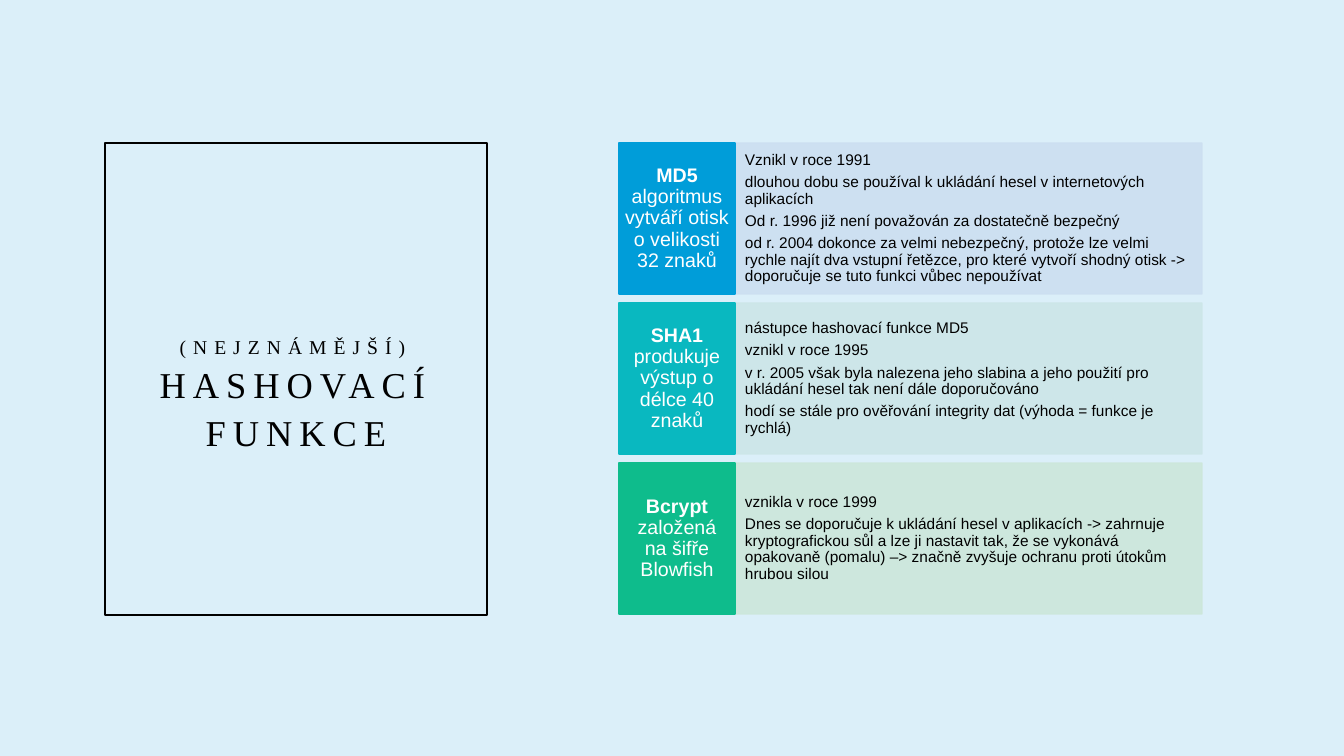
import pptx
import pptx.util
import pptx.dml.color
import pptx.enum.shapes
import pptx.enum.text
import lxml.etree

SCALE = 914400 / 100.8
Pt = pptx.util.Pt
ALIGN = pptx.enum.text.PP_ALIGN
ANCHOR = pptx.enum.text.MSO_ANCHOR
RECT = pptx.enum.shapes.MSO_SHAPE.RECTANGLE


def px(*nums):
    return [round(num * SCALE) for num in nums]


def rgb(code):
    return pptx.dml.color.RGBColor.from_string(code)


deck = pptx.Presentation()
deck.slide_width, deck.slide_height = px(1344, 756)
slide = deck.slides.add_slide(deck.slide_layouts[6])
slide.background.fill.solid()
slide.background.fill.fore_color.rgb = rgb("DBEFF9")

# Framed title
frame = slide.shapes.add_shape(RECT, *px(105, 143, 382, 472))
frame.shadow.inherit = False
frame.fill.background()
frame.line.color.rgb = rgb("000000")
frame.line.width = Pt(1)

title = slide.shapes.add_textbox(*px(105, 298, 382, 161)).text_frame
title.word_wrap = True
title.vertical_anchor = ANCHOR.BOTTOM
para = title.paragraphs[0]
para.alignment = ALIGN.CENTER
para.line_spacing = 1.1
for words, size in [("(NEJZNÁMĚJŠÍ) ", 14), ("HASHOVACÍ FUNKCE", 26)]:
    run = para.add_run()
    run.text = words
    run.font.name = "Times New Roman"
    run.font.size = Pt(size)
    run.font.color.rgb = rgb("000000")
    run.font._element.set("spc", "500")

# Rows: name, summary, label colour, body colour, facts
rows = [
    ("MD5", " algoritmus vytváří otisk o velikosti 32 znaků", "009DD9", "CCDFF1", [
        "Vznikl v roce 1991",
        "dlouhou dobu se používal k ukládání hesel v internetových aplikacích",
        "Od r. 1996 již není považován za dostatečně bezpečný",
        "od r. 2004 dokonce za velmi nebezpečný, protože lze velmi rychle najít dva "
        "vstupní řetězce, pro které vytvoří shodný otisk -> doporučuje se tuto funkci "
        "vůbec nepoužívat",
    ]),
    ("SHA1", " produkuje výstup o délce 40 znaků", "09B8C0", "CCE6E8", [
        "nástupce hashovací funkce MD5",
        "vznikl v roce 1995",
        "v r. 2005 však byla nalezena jeho slabina a jeho použití pro ukládání hesel "
        "tak není dále doporučováno",
        "hodí se stále pro ověřování integrity dat (výhoda = funkce je rychlá)",
    ]),
    ("Bcrypt", " založená na šifře Blowfish", "0EBC8C", "CCE7DA", [
        "vznikla v roce 1999",
        "Dnes se doporučuje k ukládání hesel v aplikacích -> zahrnuje kryptografickou "
        "sůl a lze ji nastavit tak, že se vykonává opakovaně (pomalu) –> značně zvyšuje "
        "ochranu proti útokům hrubou silou",
    ]),
]

for row, (name, gist, dark, pale, facts) in enumerate(rows):
    top = 143 + 160 * row
    # left, width, side inset, fill, opacity, text colour, size, alignment, paragraphs
    cells = [
        (736, 466, 9, pale, 90, "000000", 11, ALIGN.LEFT, [[(fact, False)] for fact in facts]),
        (619, 116, 6, dark, 100, "FFFFFF", 14, ALIGN.CENTER, [[(name, True), (gist, False)]]),
    ]
    for left, width, inset, fill, alpha, ink, size, align, paras in cells:
        box = slide.shapes.add_shape(RECT, *px(left, top, width, 151))
        box.shadow.inherit = False
        box.fill.solid()
        box.fill.fore_color.rgb = rgb(fill)
        box.line.color.rgb = rgb(fill)
        box.line.width = Pt(1)
        if alpha < 100:
            for tint in box._element.spPr.iter(pptx.oxml.ns.qn("a:srgbClr")):
                mark = lxml.etree.SubElement(tint, pptx.oxml.ns.qn("a:alpha"))
                mark.set("val", str(alpha * 1000))

        text = box.text_frame
        text.word_wrap = True
        text.vertical_anchor = ANCHOR.MIDDLE
        text.margin_left, text.margin_right = px(inset, inset)
        text.margin_top = text.margin_bottom = 0
        for spot, runs in enumerate(paras):
            para = text.add_paragraph() if spot else text.paragraphs[0]
            para.alignment = align
            para.line_spacing = 0.9
            para.space_after = Pt(round(size * 0.35))
            for words, bold in runs:
                run = para.add_run()
                run.text = words
                run.font.name = "Arial"
                run.font.size = Pt(size)
                run.font.bold = bold
                run.font.color.rgb = rgb(ink)

deck.save("out.pptx")
